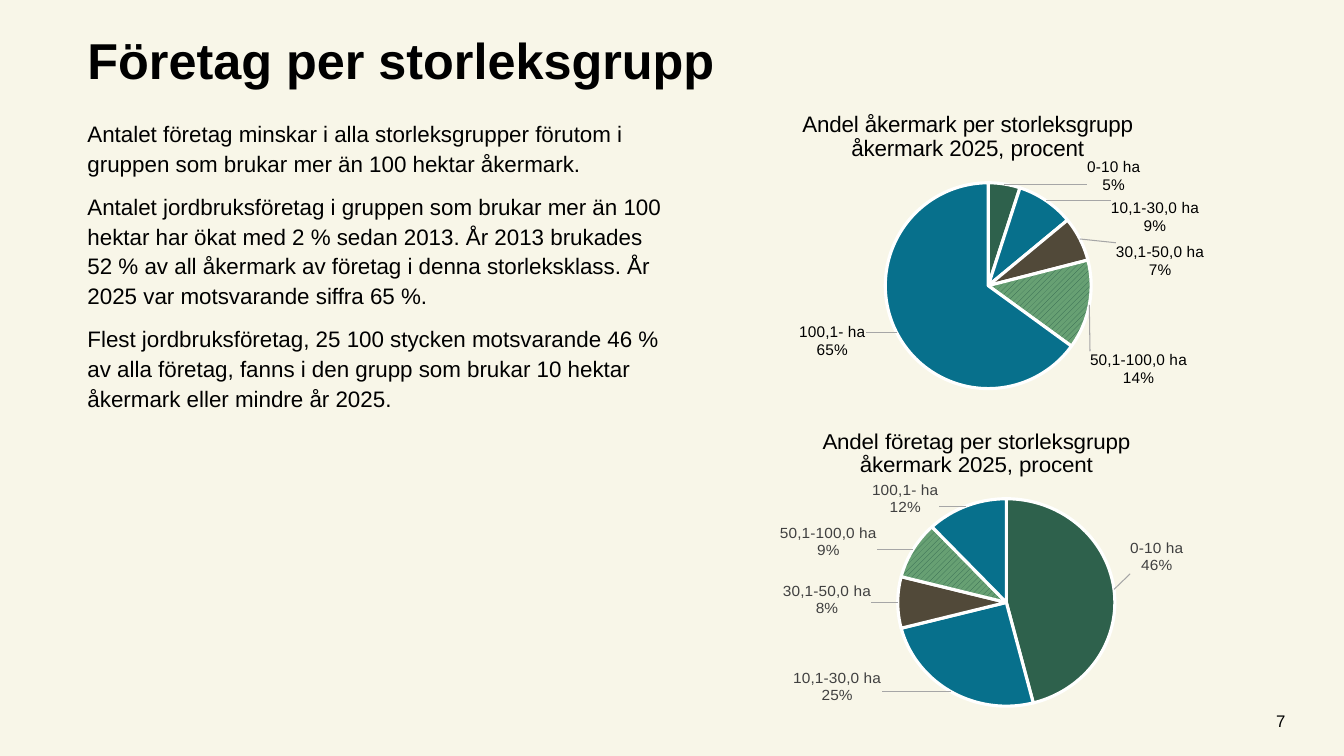
from lxml import etree
from pptx import Presentation
from pptx.chart.data import CategoryChartData
from pptx.dml.color import RGBColor
from pptx.enum.chart import XL_CHART_TYPE as ChartType
from pptx.enum.dml import MSO_PATTERN as Pattern
from pptx.enum.text import MSO_ANCHOR as Anchor, PP_ALIGN as Align
from pptx.oxml import parse_xml
from pptx.util import Pt

CREAM = RGBColor(0xF8, 0xF6, 0xE8)
BLACK = RGBColor(0x00, 0x00, 0x00)
GREY = RGBColor(0x40, 0x40, 0x40)
WHITE = RGBColor(0xFF, 0xFF, 0xFF)
GREEN = RGBColor(0x2E, 0x61, 0x4C)
LIGHT_GREEN = RGBColor(0x67, 0xA0, 0x73)
BLUE = RGBColor(0x07, 0x70, 0x8C)
LIGHT_BLUE = RGBColor(0x7F, 0xC1, 0xD4)
BROWN = RGBColor(0x51, 0x49, 0x39)
FONT = "Arial"

NS = ('xmlns:c="http://schemas.openxmlformats.org/drawingml/2006/chart" '
      'xmlns:a="http://schemas.openxmlformats.org/drawingml/2006/main"')
SHOW = ('<c:showLegendKey val="0"/><c:showVal val="0"/><c:showCatName val="1"/>'
        '<c:showSerName val="0"/><c:showPercent val="1"/><c:showBubbleSize val="0"/>'
        '<c:separator>\n</c:separator>')


def add_text(page, place, paragraphs, size, bold=False, anchor=Anchor.TOP,
             align=Align.LEFT, line_spacing=1.0):
    box = page.shapes.add_textbox(*[Pt(length) for length in place])
    frame = box.text_frame
    frame.word_wrap = True
    frame.vertical_anchor = anchor
    for index, lines in enumerate(paragraphs):
        para = frame.paragraphs[0] if index == 0 else frame.add_paragraph()
        para.alignment = align
        para.line_spacing = line_spacing
        if index:
            para.space_before = Pt(10)
        for number, line in enumerate(lines):
            if number:
                para.add_line_break()
            span = para.add_run()
            span.text = line
            span.font.name, span.font.size = FONT, Pt(size)
            span.font.bold, span.font.color.rgb = bold, BLACK
    return frame


def manual_layout(x, y, size=""):
    modes = '<c:xMode val="edge"/><c:yMode val="edge"/>' if size else ""
    target = '<c:layoutTarget val="inner"/>' if size and size != "title" else ""
    extent = f'<c:w val="{size[0]}"/><c:h val="{size[1]}"/>' if target else ""
    return (f'<c:layout {NS}><c:manualLayout>{target}{modes}<c:x val="{x}"/>'
            f'<c:y val="{y}"/>{extent}</c:manualLayout></c:layout>')


deck = Presentation()
deck.slide_width, deck.slide_height = Pt(960), Pt(540)
page = deck.slides.add_slide(deck.slide_layouts[6])
page.background.fill.solid()
page.background.fill.fore_color.rgb = CREAM

# Title, page number and body text
add_text(page, (55.4, 17.3, 854, 51), [["Företag per storleksgrupp"]], 36,
         bold=True, anchor=Anchor.BOTTOM, line_spacing=0.9)
add_text(page, (841.7, 500.4, 83.5, 28.8), [["7"]], 12,
         anchor=Anchor.MIDDLE, align=Align.RIGHT)
body = add_text(page, (55.4, 80.6, 440.6, 225.4), [
    ["Antalet företag minskar i alla storleksgrupper förutom i gruppen som brukar "
     "mer än 100 hektar åkermark."],
    ["Antalet jordbruksföretag i gruppen som brukar mer än 100 hektar har ökat med "
     "2 % sedan 2013. År 2013 brukades",
     "52 % av all åkermark av företag i denna storleksklass. År 2025 var "
     "motsvarande siffra 65 %."],
    ["Flest jordbruksföretag, 25 100 stycken motsvarande 46 % av alla företag, "
     "fanns i den grupp som brukar 10 hektar åkermark eller mindre år 2025."],
], 16, line_spacing=1.1)
body.margin_right = Pt(14)

# Pie charts: title, place, plot area, values, label offsets, label colour, background
size_groups = ["0-10 ha", "10,1-30,0 ha", "30,1-50,0 ha", "50,1-100,0 ha", "100,1- ha"]
slice_fills = [(GREEN,), (BLUE, LIGHT_BLUE, Pattern.DARK_HORIZONTAL), (BROWN,),
               (GREEN, LIGHT_GREEN, Pattern.WIDE_UPWARD_DIAGONAL), (BLUE,)]
pies = [
    ("Andel företag per storleksgrupp åkermark 2025, procent",
     (540.7, 298.8, 365.8, 223.2), (0.275, 0.234, (0.424, 0.766)), (46, 25, 8, 9, 12),
     [(0.02, -0.05), (-0.13, -0.09), (-0.04, -0.01), (-0.06, 0.04), (-0.05, 0.05)],
     GREY, CREAM),
    ("Andel åkermark per storleksgrupp åkermark 2025, procent",
     (526.3, 71.3, 365.8, 215.3), (0.29, 0.234, (0.402, 0.766)), (5, 9, 7, 14, 65),
     [(0.16, 0.05), (0.12, 0.13), (0.06, 0.14), (-0.01, 0.15), (-0.05, -0.04)],
     BLACK, None),
]
for title, place, plot_area, values, offsets, label_color, background in pies:
    data = CategoryChartData()
    data.categories = size_groups
    data.add_series("Series 1", values)
    chart = page.shapes.add_chart(
        ChartType.PIE, *[Pt(length) for length in place], data).chart
    chart.has_legend = False
    chart.font.name, chart.font.size = FONT, Pt(10)
    chart.font.color.rgb = BLACK
    chart.plots[0].vary_by_categories = True

    # Chart title
    chart.has_title = True
    span = chart.chart_title.text_frame.paragraphs[0].add_run()
    span.text = title
    span.font.name, span.font.size = FONT, Pt(16)
    span.font.bold, span.font.color.rgb = False, BLACK

    # Slices
    series = chart.plots[0].series[0]
    for index, (color, *pattern) in enumerate(slice_fills):
        slice_format = series.points[index].format
        if pattern:
            slice_format.fill.patterned()
            slice_format.fill.pattern = pattern[1]
            slice_format.fill.back_color.rgb = pattern[0]
        else:
            slice_format.fill.solid()
        slice_format.fill.fore_color.rgb = color
        slice_format.line.color.rgb = WHITE
        slice_format.line.width = Pt(2.25)

    # Category and percent labels with leader lines
    text_format = (
        '<c:numFmt formatCode="0%" sourceLinked="0"/><c:spPr><a:noFill/></c:spPr>'
        '<c:txPr><a:bodyPr/><a:p><a:pPr><a:defRPr sz="1100" b="0"><a:solidFill>'
        f'<a:srgbClr val="{label_color}"/></a:solidFill><a:latin typeface="{FONT}"/>'
        '</a:defRPr></a:pPr><a:endParaRPr lang="sv-SE"/></a:p></c:txPr>')
    point_labels = "".join(
        f'<c:dLbl><c:idx val="{index}"/>{manual_layout(x, y)}{text_format}'
        f'<c:dLblPos val="bestFit"/>{SHOW}</c:dLbl>'
        for index, (x, y) in enumerate(offsets))
    labels = parse_xml(
        f'<c:dLbls {NS}>{point_labels}{text_format}<c:dLblPos val="bestFit"/>{SHOW}'
        '<c:showLeaderLines val="1"/><c:leaderLines><c:spPr><a:ln w="9525"><a:solidFill>'
        '<a:srgbClr val="A6A6A6"/></a:solidFill></a:ln></c:spPr></c:leaderLines></c:dLbls>')
    root = chart.element
    root.find(".//{*}ser/{*}cat").addprevious(labels)

    # Title and plot positions
    for parent, layout in (("title", manual_layout(0.12, 0.02, "title")),
                           ("plotArea", manual_layout(*plot_area))):
        holder = root.find(".//{*}" + parent)
        old = holder.find("{*}layout")
        if old is not None:
            holder.remove(old)
        holder.insert(1 if parent == "title" else 0, parse_xml(layout))

    # Chart background
    if background:
        fill = etree.tostring(parse_xml(
            f'<c:spPr {NS}><a:solidFill><a:srgbClr val="{background}"/></a:solidFill>'
            '<a:ln><a:noFill/></a:ln></c:spPr>'))
    else:
        fill = f'<c:spPr {NS}><a:noFill/><a:ln><a:noFill/></a:ln></c:spPr>'
    root.find("{*}chart").addnext(parse_xml(fill))

deck.save("out.pptx")
